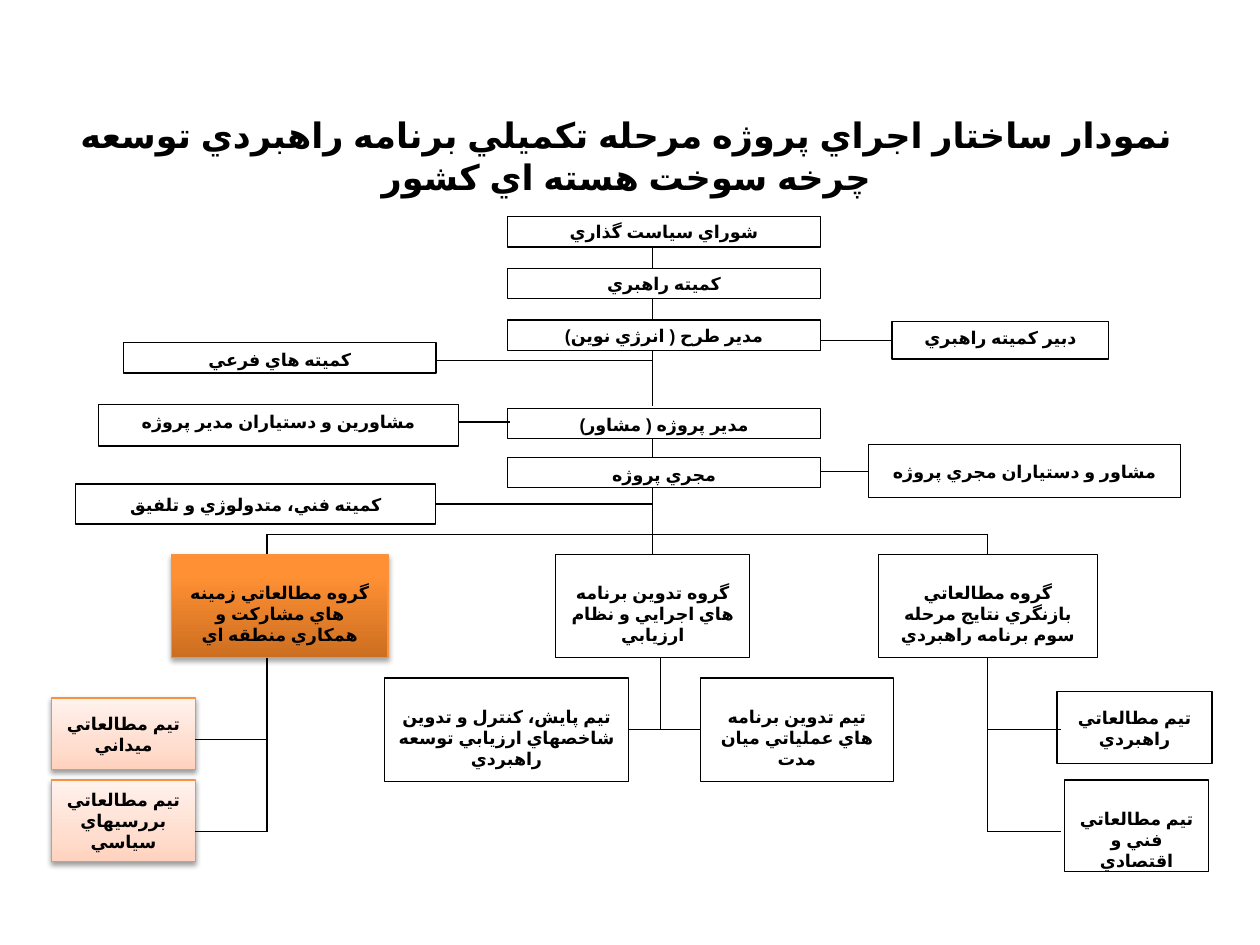
"""Build the organisation chart slide for the nuclear fuel cycle strategic plan project."""
import pptx
import pptx.dml.color
import pptx.enum.lang
import pptx.enum.shapes
import pptx.enum.text
import pptx.oxml.ns
import pptx.util
from lxml import etree
from pptx.util import Inches

COLOURS = {"text": "000000", "line": "000000", "box": "FFFFFF", "accent": "F69240", "shadow": "000000"}
GRADIENTS = {
    "group": [(0, "CC6E20"), (80, "FF9034"), (100, "FF9136")],
    "team": [(0, "FFD2BD"), (35, "FFDED0"), (100, "FFF2ED")],
}
SHADOWS = {"group": (35, 1.8), "team": (38, 1.6)}
qn = pptx.oxml.ns.qn
rgb = pptx.dml.color.RGBColor.from_string
MIDDLE = pptx.enum.text.MSO_ANCHOR.MIDDLE
TOP = pptx.enum.text.MSO_ANCHOR.TOP


def write(shape, text, size, anchor, rtl, top_inset=0.05):
    frame = shape.text_frame
    frame.word_wrap = True
    frame.vertical_anchor = anchor
    frame.margin_top = Inches(top_inset)
    paragraph = frame.paragraphs[0]
    paragraph.alignment = pptx.enum.text.PP_ALIGN.CENTER
    if rtl:
        paragraph._p.get_or_add_pPr().set("rtl", "1")
    run = paragraph.add_run()
    run.text = text
    run.font.size = pptx.util.Pt(size)
    run.font.bold = True
    run.font.name = "Arial"
    run.font.language_id = pptx.enum.lang.MSO_LANGUAGE_ID.FARSI
    run.font.color.rgb = rgb(COLOURS["text"])
    etree.SubElement(run._r.get_or_add_rPr(), qn("a:cs"), typeface="Arial")


presentation = pptx.Presentation()
presentation.slide_width = Inches(10)
presentation.slide_height = Inches(7.5)
slide = presentation.slides.add_slide(presentation.slide_layouts[6])

title = slide.shapes.add_textbox(Inches(0.22), Inches(0.93), Inches(9.5), Inches(0.61))
write(title, "نمودار ساختار اجراي پروژه مرحله تكميلي برنامه راهبردي توسعه چرخه سوخت هسته اي كشور", 20, MIDDLE, False)

SPINE, RIGHT, LEFT = 5.18, 7.84, 2.12
LOW = 0.22
units = {
    "council": ("شوراي سياست گذاري", 4.03, 1.72, 2.48, 0.24, MIDDLE, 0.05, None),
    "steering": ("كميته راهبري", 4.03, 2.13, 2.48, 0.24, MIDDLE, 0.05, None),
    "plan manager": ("مدير طرح ( انرژي نوين)", 4.03, 2.54, 2.48, 0.24, MIDDLE, 0.05, None),
    "subcommittees": ("كميته هاي فرعي", 0.98, 2.72, 2.48, 0.24, TOP, 0.05, None),
    "project manager": ("مدير پروژه ( مشاور)", 4.03, 3.24, 2.48, 0.24, TOP, 0.05, None),
    "executor": ("مجري پروژه", 4.03, 3.63, 2.48, 0.24, TOP, 0.05, None),
    "secretary": ("دبير كميته راهبري", 7.08, 2.55, 1.72, 0.3, TOP, 0.05, None),
    "executor aides": ("مشاور و دستياران مجري پروژه", 6.89, 3.53, 2.48, 0.42, MIDDLE, 0.05, None),
    "manager aides": ("مشاورين و دستياران مدير پروژه", 0.78, 3.21, 2.86, 0.33, TOP, 0.05, None),
    "technical": ("کميته فني، متدولوژي و تلفيق", 0.6, 3.84, 2.86, 0.32, MIDDLE, 0.05, None),
    "review group": ("گروه مطالعاتي بازنگري نتايج مرحله سوم برنامه راهبردي", 6.97, 4.4, 1.74, 0.82, TOP, LOW, None),
    "planning group": ("گروه تدوين برنامه هاي اجرايي و نظام ارزيابي", 4.41, 4.4, 1.54, 0.82, TOP, LOW, None),
    "regional group": ("گروه مطالعاتي زمينه هاي مشاركت و همكاري منطقه اي", 1.36, 4.4, 1.72, 0.82, TOP, LOW, "group"),
    "monitoring team": ("تيم پايش، كنترل و تدوين شاخصهاي ارزيابي توسعه راهبردي", 3.05, 5.38, 1.94, 0.82, TOP, LOW, None),
    "operations team": ("تيم تدوين برنامه هاي عملياتي ميان مدت", 5.56, 5.38, 1.53, 0.82, TOP, LOW, None),
    "strategy team": ("تيم مطالعاتي راهبردي", 8.39, 5.49, 1.23, 0.57, MIDDLE, 0.05, None),
    "economics team": ("تيم مطالعاتي فني و اقتصادي", 8.45, 6.19, 1.14, 0.73, TOP, LOW, None),
    "field team": ("تيم مطالعاتي ميداني", 0.41, 5.54, 1.14, 0.57, MIDDLE, 0.05, "team"),
    "politics team": ("تيم مطالعاتي بررسيهاي سياسي", 0.41, 6.19, 1.14, 0.65, MIDDLE, 0.05, "team"),
}
boxes = {}
for unit, (text, left, top, width, height, anchor, inset, style) in units.items():
    box = slide.shapes.add_shape(
        pptx.enum.shapes.MSO_SHAPE.RECTANGLE, Inches(left), Inches(top), Inches(width), Inches(height))
    box.shadow.inherit = False
    box.line.width = pptx.util.Pt(0.75)
    box.line.color.rgb = rgb(COLOURS["accent" if style else "line"])
    if style:
        box.fill.gradient()
        box.fill.gradient_angle = 90
        stops = box._element.spPr.find(".//" + qn("a:gsLst"))
        for stop in list(stops):
            stops.remove(stop)
        for position, colour in GRADIENTS[style]:
            stop = etree.SubElement(stops, qn("a:gs"), pos=str(position * 1000))
            etree.SubElement(stop, qn("a:srgbClr"), val=colour)
        opacity, distance = SHADOWS[style]
        shadow = etree.SubElement(
            box._element.spPr.find(qn("a:effectLst")), qn("a:outerShdw"), blurRad=str(pptx.util.Pt(3.1)),
            dist=str(pptx.util.Pt(distance)), dir="5400000", rotWithShape="0")
        shade = etree.SubElement(shadow, qn("a:srgbClr"), val=COLOURS["shadow"])
        etree.SubElement(shade, qn("a:alpha"), val=str(opacity * 1000))
    else:
        box.fill.solid()
        box.fill.fore_color.rgb = rgb(COLOURS["box"])
    write(box, text, 10, anchor, True, inset)
    boxes[unit] = box

links = [
    (SPINE, 1.96, SPINE, 2.13, None, None),
    (SPINE, 2.37, SPINE, 2.54, None, None),
    (SPINE, 2.78, SPINE, 3.22, None, None),
    (SPINE, 3.48, SPINE, 3.63, None, None),
    (SPINE, 3.87, SPINE, 4.24, None, None),
    (LEFT, 4.24, RIGHT, 4.24, None, None),
    (LEFT, 4.24, LEFT, 4.4, None, None),
    (SPINE, 4.24, SPINE, 4.4, None, ("planning group", 0)),
    (RIGHT, 4.24, RIGHT, 4.4, None, ("review group", 0)),
    (SPINE, 2.86, 3.46, 2.86, None, None),
    (SPINE, 4, 3.46, 4, None, ("technical", 3)),
    (3.64, 3.35, 4.05, 3.35, None, None),
    (6.51, 2.7, 7.08, 2.7, None, ("secretary", 1)),
    (6.51, 3.74, 6.89, 3.74, None, ("executor aides", 1)),
    (LEFT, 5.22, LEFT, 6.6, None, None),
    (LEFT, 5.87, 1.55, 5.87, None, None),
    (LEFT, 6.6, 1.55, 6.6, None, None),
    (5.24, 5.22, 5.24, 5.79, None, None),
    (4.99, 5.79, 5.56, 5.79, ("monitoring team", 3), ("operations team", 1)),
    (RIGHT, 5.22, RIGHT, 6.6, ("review group", 2), None),
    (RIGHT, 5.79, 8.42, 5.79, None, None),
    (RIGHT, 6.6, 8.42, 6.6, None, None),
]
for x1, y1, x2, y2, source, target in links:
    link = slide.shapes.add_connector(
        pptx.enum.shapes.MSO_CONNECTOR.STRAIGHT, Inches(x1), Inches(y1), Inches(x2), Inches(y2))
    link.line.width = pptx.util.Pt(0.75)
    link.line.color.rgb = rgb(COLOURS["line"])
    etree.SubElement(link._element.spPr, qn("a:effectLst"))
    if source:
        link.begin_connect(boxes[source[0]], source[1])
    if target:
        link.end_connect(boxes[target[0]], target[1])

presentation.save("out.pptx")
